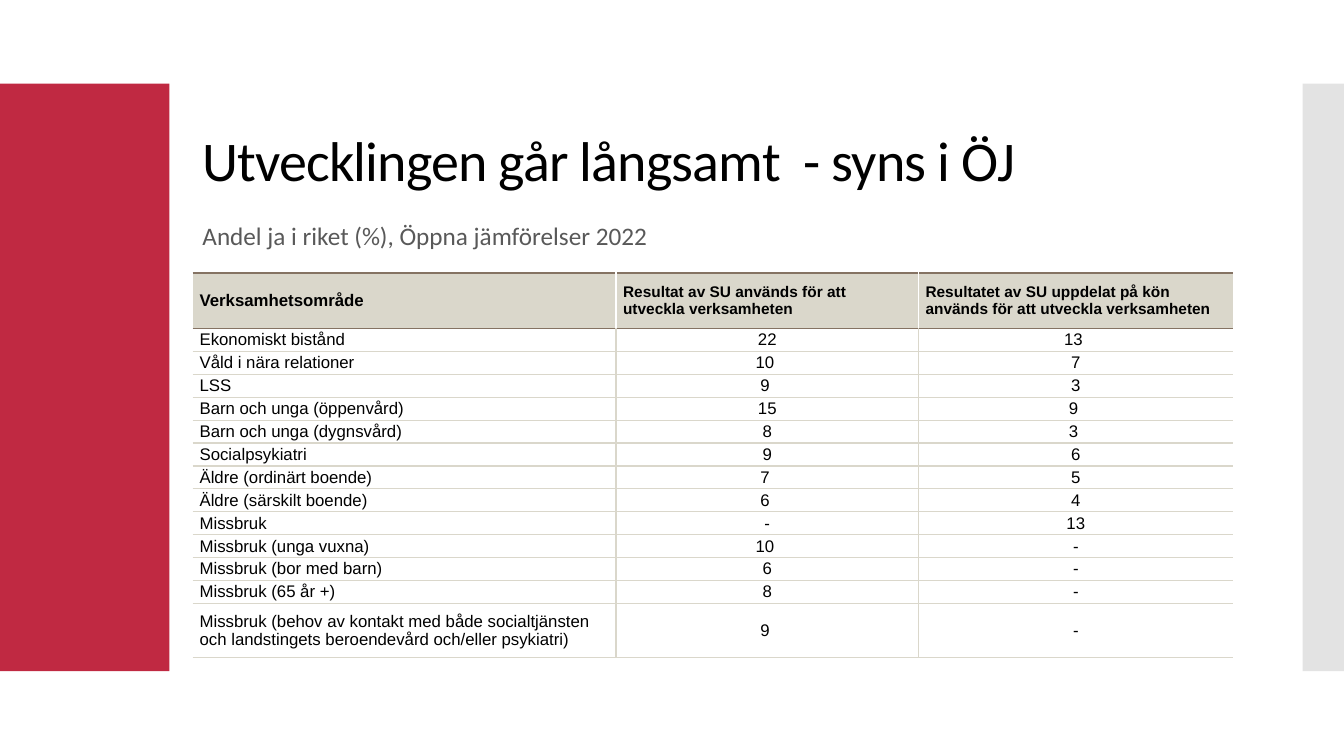
"""Build the slide about slow progress in Öppna jämförelser."""
from copy import deepcopy
from dataclasses import dataclass

from lxml import etree
from pptx import Presentation
from pptx.dml.color import RGBColor
from pptx.enum.shapes import MSO_SHAPE
from pptx.enum.text import MSO_ANCHOR, PP_ALIGN
from pptx.oxml.ns import qn
from pptx.slide import Slide
from pptx.table import _Cell
from pptx.text.text import _Paragraph
from pptx.util import Inches, Pt

RECTANGLE = MSO_SHAPE.RECTANGLE
LEFT, CENTER = PP_ALIGN.LEFT, PP_ALIGN.CENTER
TOP, MIDDLE, BOTTOM = MSO_ANCHOR.TOP, MSO_ANCHOR.MIDDLE, MSO_ANCHOR.BOTTOM
BLACK, WHITE, GRAY = "000000", "FFFFFF", "595959"
SAND, BROWN = "DAD7CB", "857363"
TABLE_HEIGHT, HEADER_HEIGHT, LAST_HEIGHT = 3.82, 0.55, 0.54
COLUMN_WIDTHS = (4.2, 3, 3.12)


@dataclass
class Band:
    left: float
    width: float
    color: str
    opacity: int


@dataclass
class Label:
    text: str
    box: tuple[float, float, float, float]
    size: float
    color: str
    anchor: MSO_ANCHOR
    wrap: bool
    line_spacing: float
    tracking: int


@dataclass
class Area:
    name: str
    used: str
    used_by_gender: str


BANDS = (Band(0, 1.68, "C02942", 100), Band(12.92, 0.42, "C8C8C8", 50))
LABELS = (
    Label("Utvecklingen går långsamt  - syns i ÖJ", (1.91, 0.86, 10.32, 1.11),
          40, BLACK, BOTTOM, True, 0.9, -60),
    Label("Andel ja i riket (%), Öppna jämförelser 2022", (1.91, 2.14, 4.7, 0.4),
          18, GRAY, TOP, False, 1.0, 0),
)
HEADINGS = Area(
    "Verksamhetsområde",
    "Resultat av SU används för att \vutveckla verksamheten",
    "Resultatet av SU uppdelat på kön används för att utveckla verksamheten",
)
AREAS = (
    Area("Ekonomiskt bistånd", "22", "13 "),
    Area("Våld i nära relationer", "10 ", "7"),
    Area("LSS", "9 ", "3"),
    Area("Barn och unga (öppenvård)", "15", "9 "),
    Area("Barn och unga (dygnsvård)", "8", "3 "),
    Area("Socialpsykiatri", "9", "6"),
    Area("Äldre (ordinärt boende)", "7 ", "5"),
    Area("Äldre (särskilt boende)", "6 ", "4"),
    Area("Missbruk", "-", "13"),
    Area("Missbruk (unga vuxna)", "10 ", "-"),
    Area("Missbruk (bor med barn)", "6", "-"),
    Area("Missbruk (65 år +)", "8", "-"),
    Area("Missbruk (behov av kontakt med både socialtjänsten och landstingets "
         "beroendevård och/eller psykiatri)", "9 ", "-"),
)


def rgb(color: str) -> RGBColor:
    """Turn a hex string into a colour."""
    return RGBColor.from_string(color)


def apply_format(target: object, values: dict[str, object]) -> None:
    """Set each named attribute on the target."""
    for name, value in values.items():
        setattr(target, name, value)


def write_text(paragraph: _Paragraph, text: str, color: str, font: dict[str, object]) -> None:
    """Fill a paragraph with text in one format, line breaks included."""
    paragraph.text = text
    for run in paragraph.runs:
        apply_format(run.font, font)
        run.font.color.rgb = rgb(color)
    for line_break in paragraph._p.findall(qn("a:br")):
        line_break.insert(0, deepcopy(paragraph.runs[0]._r.rPr))


def draw_band(slide: Slide, band: Band) -> None:
    """Draw one vertical side band."""
    shape = slide.shapes.add_shape(
        RECTANGLE, Inches(band.left), Inches(0.83), Inches(band.width), Inches(5.83))
    shape.shadow.inherit = False
    shape.fill.solid()
    shape.fill.fore_color.rgb = rgb(band.color)
    shape.line.fill.background()
    if band.opacity < 100:
        fill_color = shape._element.spPr.find(".//" + qn("a:srgbClr"))
        etree.SubElement(fill_color, qn("a:alpha"), val=str(band.opacity * 1000))


def draw_label(slide: Slide, label: Label) -> None:
    """Draw one text box above the table."""
    frame = slide.shapes.add_textbox(*map(Inches, label.box)).text_frame
    apply_format(frame, {"word_wrap": label.wrap, "vertical_anchor": label.anchor})
    paragraph = frame.paragraphs[0]
    paragraph.line_spacing = label.line_spacing
    write_text(paragraph, label.text, label.color,
               {"name": "Calibri", "size": Pt(label.size)})
    if label.tracking:
        paragraph.runs[0]._r.rPr.set("spc", str(label.tracking))


def set_border(cell: _Cell, side: str, color: str | None, width: float = 1) -> None:
    """Give one side of a cell a line, or none when there is no colour."""
    line = etree.SubElement(cell._tc.get_or_add_tcPr(), qn("a:ln" + side),
                            w=str(Pt(width)))
    if color is None:
        etree.SubElement(line, qn("a:noFill"))
    else:
        fill = etree.SubElement(line, qn("a:solidFill"))
        etree.SubElement(fill, qn("a:srgbClr"), val=color)


def draw_cell(cell: _Cell, text: str, row: int, column: int) -> None:
    """Format and fill one table cell."""
    header = row == 0
    inner = WHITE if header else SAND
    set_border(cell, "L", inner if column > 0 else None)
    set_border(cell, "R", inner if column < len(COLUMN_WIDTHS) - 1 else None)
    set_border(cell, "T", BROWN if row < 2 else SAND, 1.5 if header else 1)
    set_border(cell, "B", BROWN if header else SAND)
    if header:
        cell.fill.solid()
        cell.fill.fore_color.rgb = rgb(SAND)
    else:
        cell.fill.background()
    apply_format(cell, {
        "margin_left": Inches(0.07), "margin_right": Inches(0.07),
        "margin_top": 0, "margin_bottom": 0, "vertical_anchor": MIDDLE,
    })
    paragraph = cell.text_frame.paragraphs[0]
    apply_format(paragraph, {
        "alignment": LEFT if header or column == 0 else CENTER,
        "space_after": Pt(2 if header else 1),
    })
    size = 11 if header and column > 0 else 12
    write_text(paragraph, text, BLACK, {"name": "Arial", "size": Pt(size), "bold": header})


def draw_table(slide: Slide) -> None:
    """Draw the table of areas and shares."""
    rows = (HEADINGS, *AREAS)
    table = slide.shapes.add_table(
        len(rows), len(COLUMN_WIDTHS), Inches(1.91), Inches(2.71),
        Inches(sum(COLUMN_WIDTHS)), Inches(TABLE_HEIGHT)).table
    apply_format(table, {"first_row": False, "horz_banding": False})
    for column, width in zip(table.columns, COLUMN_WIDTHS):
        column.width = Inches(width)
    middle_count = len(rows) - 2
    middle_height = (TABLE_HEIGHT - HEADER_HEIGHT - LAST_HEIGHT) / middle_count
    heights = (HEADER_HEIGHT, *[middle_height] * middle_count, LAST_HEIGHT)
    for row, (area, height) in enumerate(zip(rows, heights)):
        table.rows[row].height = Inches(height)
        for column, text in enumerate((area.name, area.used, area.used_by_gender)):
            draw_cell(table.cell(row, column), text, row, column)


def main() -> None:
    """Build and save the presentation."""
    presentation = Presentation()
    apply_format(presentation, {"slide_width": Inches(13.33), "slide_height": Inches(7.5)})
    slide = presentation.slides.add_slide(presentation.slide_layouts[6])
    for band in BANDS:
        draw_band(slide, band)
    for label in LABELS:
        draw_label(slide, label)
    draw_table(slide)
    presentation.save("out.pptx")


if __name__ == "__main__":
    main()
